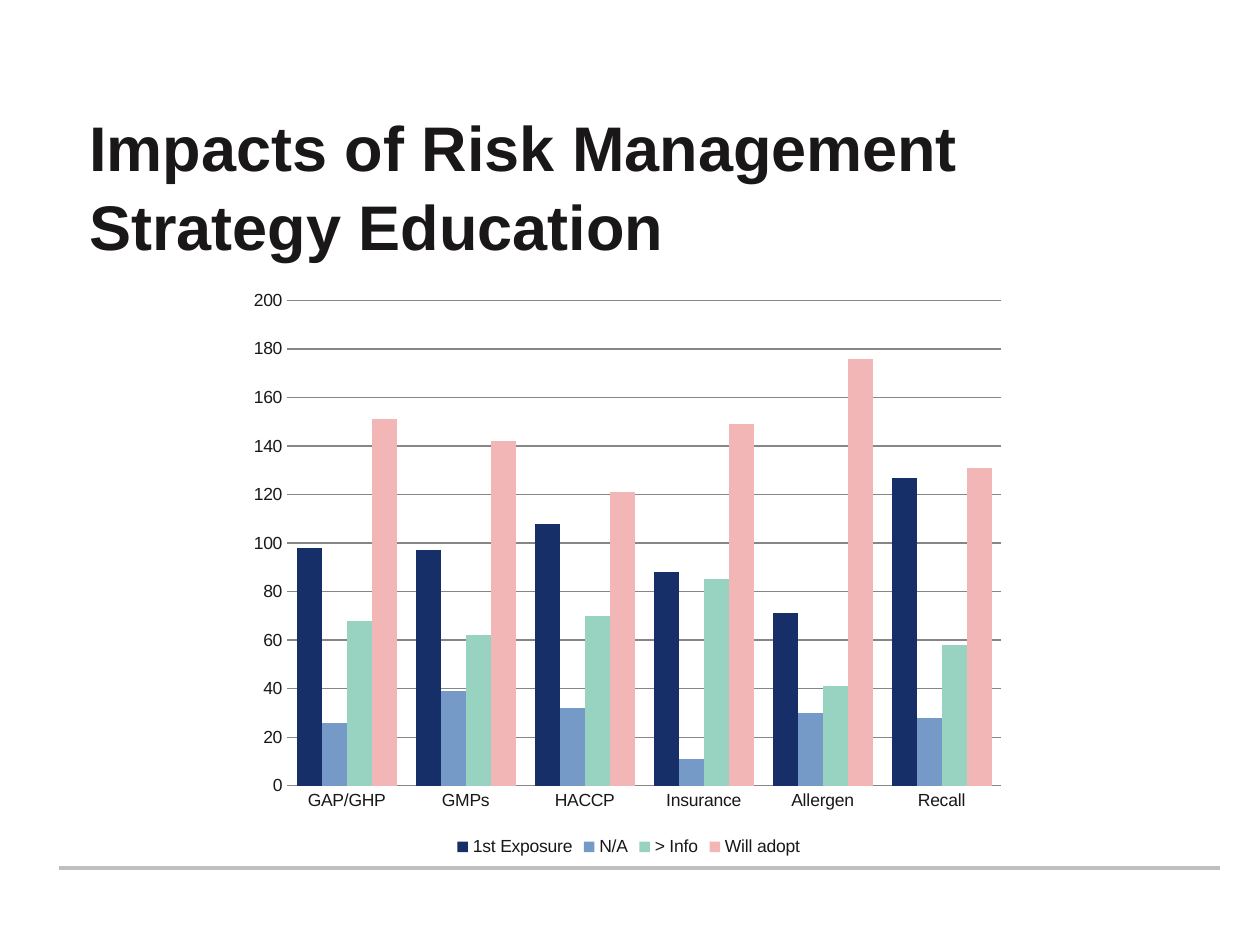
"""Build the slide on the impacts of risk management strategy education."""
from dataclasses import dataclass

from lxml import etree
from pptx import Presentation
from pptx.chart.data import CategoryChartData
from pptx.dml.color import RGBColor
from pptx.enum.chart import XL_CHART_TYPE, XL_LEGEND_POSITION, XL_TICK_MARK
from pptx.enum.shapes import MSO_CONNECTOR
from pptx.enum.text import MSO_ANCHOR
from pptx.oxml import parse_xml
from pptx.oxml.ns import nsdecls, qn
from pptx.util import Inches, Pt

CLUSTERED = XL_CHART_TYPE.COLUMN_CLUSTERED
LEGEND_BOTTOM = XL_LEGEND_POSITION.BOTTOM
NO_TICK = XL_TICK_MARK.NONE
STRAIGHT = MSO_CONNECTOR.STRAIGHT
MIDDLE = MSO_ANCHOR.MIDDLE

WIDTH, HEIGHT = Inches(10), Inches(7.5)


@dataclass(frozen=True)
class Theme:
    """Colours, font and type sizes of the slide."""
    font: str = "Arial"
    ink: str = "1A1718"
    rule: str = "BFBFBF"
    grid: str = "868686"
    title_size: float = 36
    chart_size: float = 10
    rule_width: float = 2.25
    grid_width: float = 0.75


THEME = Theme()
TITLE = "Impacts of Risk Management Strategy Education"
TOPICS = ["GAP/GHP", "GMPs", "HACCP", "Insurance", "Allergen", "Recall"]
RESPONSES = [
    ("1st Exposure", "172F68", (98, 97, 108, 88, 71, 127)),
    ("N/A", "769AC7", (26, 39, 32, 11, 30, 28)),
    ("> Info", "98D3C1", (68, 62, 70, 85, 41, 58)),
    ("Will adopt", "F2B6B7", (151, 142, 121, 149, 176, 131)),
]
PLOT_SHARES = {"x": 0.06, "y": 0.04, "w": 0.92, "h": 0.83}


def inches(*lengths):
    """Turn lengths in inches into slide units."""
    return [Inches(length) for length in lengths]


def apply(target, **values):
    """Set each named attribute on the target."""
    for name, value in values.items():
        setattr(target, name, value)


def style_font(font, size, bold=False):
    """Give a font the theme's face and ink."""
    apply(font, name=THEME.font, size=Pt(size), bold=bold)
    font.color.rgb = RGBColor.from_string(THEME.ink)


def style_line(line, color, width):
    """Give a line its colour and width in points."""
    line.color.rgb = RGBColor.from_string(color)
    line.width = Pt(width)


def add_footer_rule(slide):
    """Draw the rule near the foot of the slide."""
    rule = slide.shapes.add_connector(STRAIGHT, *inches(0.47, 6.89, 9.68, 6.89))
    style_line(rule.line, THEME.rule, THEME.rule_width)
    etree.SubElement(rule._element.spPr, qn("a:effectLst"))


def add_title(slide):
    """Place the heading, centred vertically in its box."""
    heading = slide.shapes.add_textbox(*inches(0.71, 1.06, 8.87, 0.8))
    frame = heading.text_frame
    apply(frame, word_wrap=True, vertical_anchor=MIDDLE, margin_left=0,
          margin_right=0, margin_top=0, margin_bottom=0)
    paragraph = frame.paragraphs[0]
    apply(paragraph, text=TITLE, line_spacing=1.05)
    style_font(paragraph.runs[0].font, THEME.title_size, bold=True)


def fix_plot_area(chart):
    """Set the inner plot area as shares of the chart."""
    modes = "".join(f'<c:{side}Mode val="edge"/>' for side in "xy")
    shares = "".join(f'<c:{side} val="{share}"/>' for side, share in PLOT_SHARES.items())
    layout = parse_xml(
        f'<c:layout {nsdecls("c")}><c:manualLayout><c:layoutTarget val="inner"/>'
        f"{modes}{shares}</c:manualLayout></c:layout>")
    plot_area = chart._chartSpace.chart.plotArea
    for automatic in plot_area.findall(qn("c:layout")):
        plot_area.remove(automatic)
    plot_area.insert(0, layout)


def style_axes(chart):
    """Format the topic axis, the count axis and its gridlines."""
    topics, counts = chart.category_axis, chart.value_axis
    for axis in (topics, counts):
        apply(axis, major_tick_mark=NO_TICK, minor_tick_mark=NO_TICK)
    apply(counts, minimum_scale=0, maximum_scale=200, major_unit=20,
          has_major_gridlines=True)
    counts.format.line.fill.background()
    for line in (topics.format.line, counts.major_gridlines.format.line):
        style_line(line, THEME.grid, THEME.grid_width)


def add_response_chart(slide):
    """Add the clustered columns of responses by topic."""
    data = CategoryChartData()
    data.categories = TOPICS
    for name, _, counts in RESPONSES:
        data.add_series(name, counts)
    chart = slide.shapes.add_chart(CLUSTERED, *inches(1.91, 2.2, 6.16, 4.64), data).chart
    style_font(chart.font, THEME.chart_size)
    apply(chart, has_title=False, has_legend=True)
    apply(chart.legend, position=LEGEND_BOTTOM, include_in_layout=False)
    plot = chart.plots[0]
    apply(plot, gap_width=75, overlap=0, vary_by_categories=False)
    for series, (_, color, _) in zip(plot.series, RESPONSES):
        series.format.fill.solid()
        series.format.fill.fore_color.rgb = RGBColor.from_string(color)
    style_axes(chart)
    fix_plot_area(chart)


def main():
    """Build and save the slide."""
    deck = Presentation()
    apply(deck, slide_width=WIDTH, slide_height=HEIGHT)
    slide = deck.slides.add_slide(deck.slide_layouts[6])
    add_footer_rule(slide)
    add_title(slide)
    add_response_chart(slide)
    deck.save("out.pptx")


if __name__ == "__main__":
    main()
